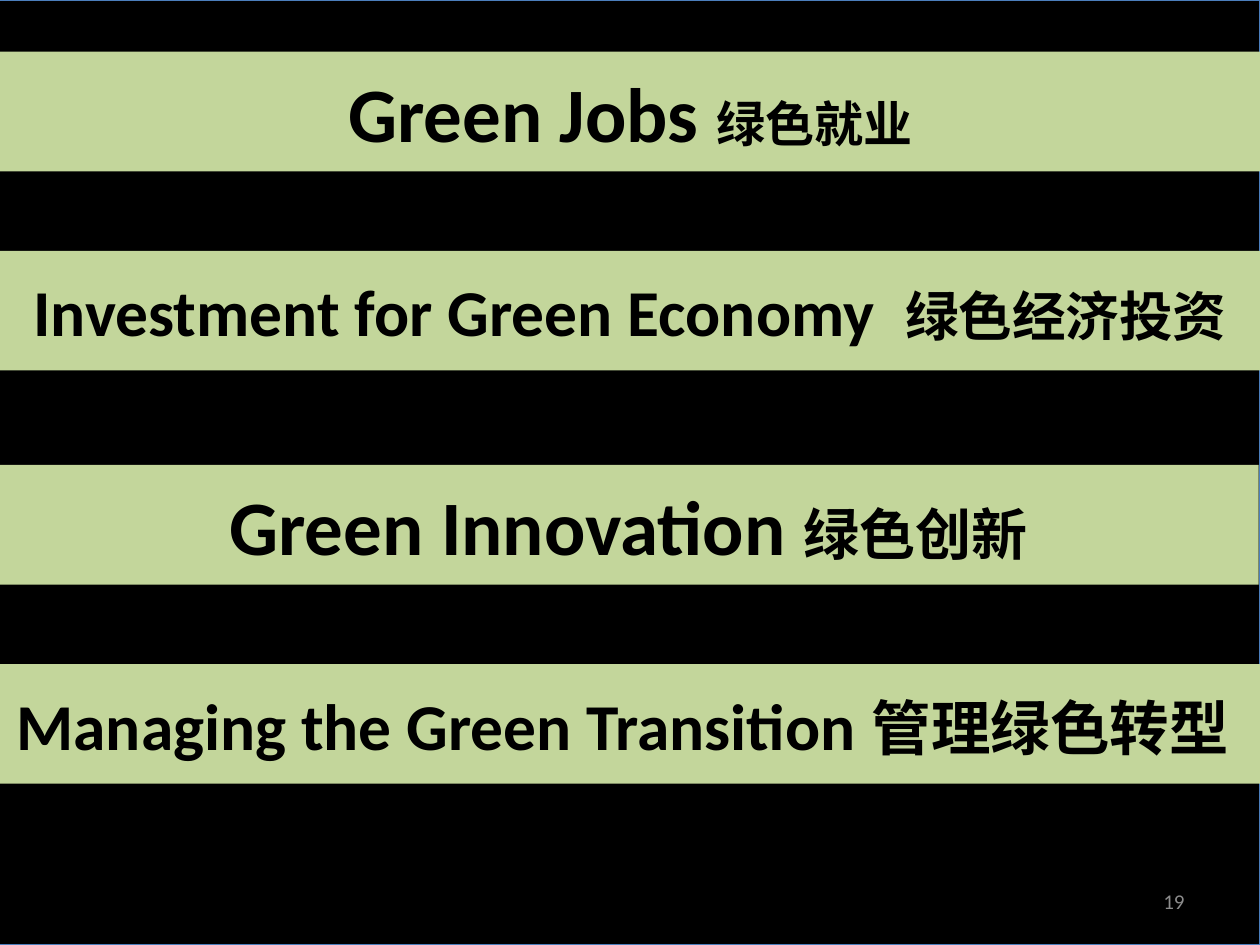
"""Build a slide of four green bilingual topic bands on black."""
from dataclasses import dataclass

from pptx import Presentation
from pptx.dml.color import RGBColor
from pptx.enum import shapes, text
from pptx.util import Inches, Pt


@dataclass(frozen=True)
class Theme:
    font: str = "Calibri"
    black: RGBColor = RGBColor(0, 0, 0)
    green: RGBColor = RGBColor(0xC3, 0xD6, 0x9B)
    blue: RGBColor = RGBColor(0x4B, 0x7E, 0xBC)
    grey: RGBColor = RGBColor(0x8C, 0x8C, 0x8C)
    large: float = 44
    medium: float = 37.4
    small: float = 12


@dataclass(frozen=True)
class Band:
    left: float
    top: float
    runs: tuple[tuple[str, float], ...]


THEME = Theme()
HEAD = Band(0, 0.41, (("Green Jobs ", THEME.large), ("绿色就业", 28)))
BANDS = (
    Band(-0.01, 3.69, (("Green Innovation ", THEME.large), ("绿色创新", 32))),
    Band(0, 1.99, (("Investment for Green Economy  ", THEME.medium),
                   ("绿色经济投资", 30.6))),
    Band(0, 5.27, (("Managing the Green Transition ", THEME.medium),
                   ("管理绿色转型", 34), (" ", THEME.medium))),
)


def place(shape, left: float, top: float, width: float, height: float) -> None:
    shape.left, shape.top = Inches(left), Inches(top)
    shape.width, shape.height = Inches(width), Inches(height)


def write(shape, runs: tuple[tuple[str, float], ...], color: RGBColor,
          align: text.PP_ALIGN, bold: bool) -> None:
    frame = shape.text_frame
    frame.word_wrap = True
    frame.auto_size = text.MSO_AUTO_SIZE.NONE
    frame.vertical_anchor = text.MSO_ANCHOR.MIDDLE
    para = frame.paragraphs[0]
    para.alignment = align
    for words, size in runs:
        run = para.add_run()
        run.text = words
        font = run.font
        font.name, font.size, font.bold = THEME.font, Pt(size), bold
        font.color.rgb = color


def paint(shape, color: RGBColor) -> None:
    shape.fill.solid()
    shape.fill.fore_color.rgb = color


def add_rect(slide):
    rect = slide.shapes.add_shape(shapes.MSO_SHAPE.RECTANGLE, 0, 0, 0, 0)
    rect.shadow.inherit = False
    return rect


def draw_band(shape, band: Band) -> None:
    place(shape, band.left, band.top, 10, 0.95)
    paint(shape, THEME.green)
    shape.line.fill.background()
    write(shape, band.runs, THEME.black, text.PP_ALIGN.CENTER, True)


def draw_back(slide) -> None:
    back = add_rect(slide)
    place(back, -0.01, 0, 10.01, 7.5)
    paint(back, THEME.black)
    back.line.color.rgb = THEME.blue
    back.line.width = Pt(0.75)
    slide.shapes.title._element.addprevious(back._element)


def main() -> None:
    deck = Presentation()
    deck.slide_width, deck.slide_height = Inches(10), Inches(7.5)
    slide = deck.slides.add_slide(deck.slide_layouts[5])
    draw_back(slide)
    draw_band(slide.shapes.title, HEAD)
    page = slide.shapes.add_textbox(0, 0, 0, 0)
    place(page, 7.17, 6.95, 2.33, 0.4)
    write(page, (("19", THEME.small),), THEME.grey, text.PP_ALIGN.RIGHT, False)
    for band in BANDS:
        draw_band(add_rect(slide), band)
    deck.save("out.pptx")


if __name__ == "__main__":
    main()
